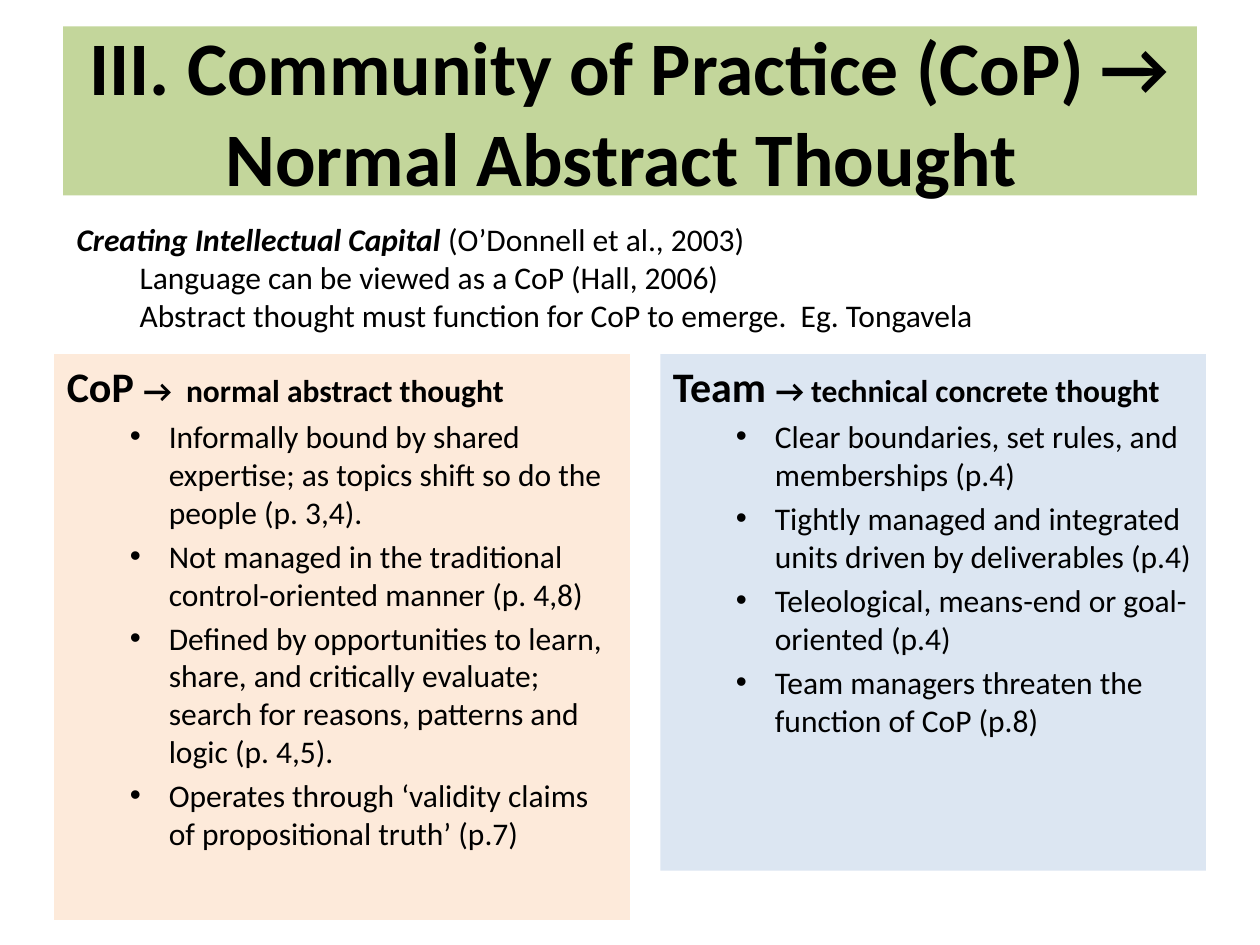
"""Build the slide comparing a community of practice with a team."""
import pptx
import pptx.util
import pptx.dml.color
import pptx.enum.text
import pptx.oxml.ns
import lxml.etree

Inches = pptx.util.Inches

THEME = {
    "font": "Calibri", "ink": "000000",
    "green": "C3D69B", "peach": "FDEADA", "blue": "DCE6F2",
    "title": 43.2, "head": 24, "text": 18,
}

TITLE = "III. Community of Practice (CoP) → Normal Abstract Thought "
INTRO = {
    "lead": "Creating Intellectual Capital ",
    "cite": "(O’Donnell et al., 2003)",
    "lines": [
        "Language can be viewed as a CoP (Hall, 2006)",
        "Abstract thought must function for CoP to emerge.  Eg. Tongavela",
    ],
}
PANELS = [
    {"head": "CoP ", "tail": "→  normal abstract thought",
     "fill": "peach", "box": (0.43, 2.81, 4.57, 4.49),
     "items": [
         "Informally bound by shared expertise; as topics shift so do the people (p. 3,4).",
         "Not managed in the traditional control-oriented manner (p. 4,8)",
         "Defined by opportunities to learn, share, and critically evaluate; "
         "search for reasons, patterns and logic (p. 4,5).",
         "Operates through ‘validity claims of propositional truth’ (p.7)",
     ]},
    {"head": "Team ", "tail": "→ technical concrete thought",
     "fill": "blue", "box": (5.24, 2.81, 4.33, 4.1),
     "items": [
         "Clear boundaries, set rules, and memberships (p.4)",
         "Tightly managed and integrated units driven by deliverables (p.4)",
         "Teleological, means-end or goal-oriented (p.4)",
         "Team managers threaten the function of CoP (p.8)",
     ]},
]


def color(name):
    return pptx.dml.color.RGBColor.from_string(THEME[name])


def write(para, text, size="text", bold=False, slant=False):
    run = para.add_run()
    run.text = text
    font = run.font
    font.name, font.size = THEME["font"], pptx.util.Pt(THEME[size])
    font.bold, font.italic = bold, slant
    font.color.rgb = color("ink")


def indent(para, left, hang=0, mark=None):
    props = para._p.get_or_add_pPr()
    props.set("marL", str(Inches(left)))
    props.set("indent", str(Inches(-hang)))
    tag = pptx.oxml.ns.qn("a:buChar" if mark else "a:buNone")
    node = lxml.etree.SubElement(props, tag)
    if mark:
        node.set("char", mark)


def place(shape, box, fill=None):
    shape.left, shape.top, shape.width, shape.height = map(Inches, box)
    if fill:
        shape.fill.solid()
        shape.fill.fore_color.rgb = color(fill)
    frame = shape.text_frame
    frame.word_wrap = True
    frame.auto_size = pptx.enum.text.MSO_AUTO_SIZE.NONE
    return frame


def add_panel(holder, panel):
    frame = place(holder, panel["box"], panel["fill"])
    para = frame.paragraphs[0]
    indent(para, 0)
    write(para, panel["head"], size="head", bold=True)
    write(para, panel["tail"], bold=True)
    for item in panel["items"]:
        para = frame.add_paragraph()
        para.level = 1
        indent(para, 0.81, hang=0.31, mark="•")
        write(para, item)


def add_intro(slide):
    box = (0.51, 1.7, 8.98, 1.92)
    frame = place(slide.shapes.add_textbox(0, 0, 0, 0), box)
    para = frame.paragraphs[0]
    write(para, INTRO["lead"], bold=True, slant=True)
    write(para, INTRO["cite"])
    for line in INTRO["lines"]:
        para = frame.add_paragraph()
        para.level = 1
        indent(para, 0.5)
        write(para, line)


def main():
    deck = pptx.Presentation()
    deck.slide_width, deck.slide_height = Inches(10), Inches(7.5)
    slide = deck.slides.add_slide(deck.slide_layouts[3])
    title, *bodies = slide.placeholders
    frame = place(title, (0.5, 0.21, 9, 1.34), "green")
    frame.vertical_anchor = pptx.enum.text.MSO_ANCHOR.MIDDLE
    frame.paragraphs[0].alignment = pptx.enum.text.PP_ALIGN.CENTER
    write(frame.paragraphs[0], TITLE, size="title", bold=True)
    for holder, panel in zip(bodies, PANELS):
        add_panel(holder, panel)
    add_intro(slide)
    deck.save("out.pptx")


if __name__ == "__main__":
    main()
